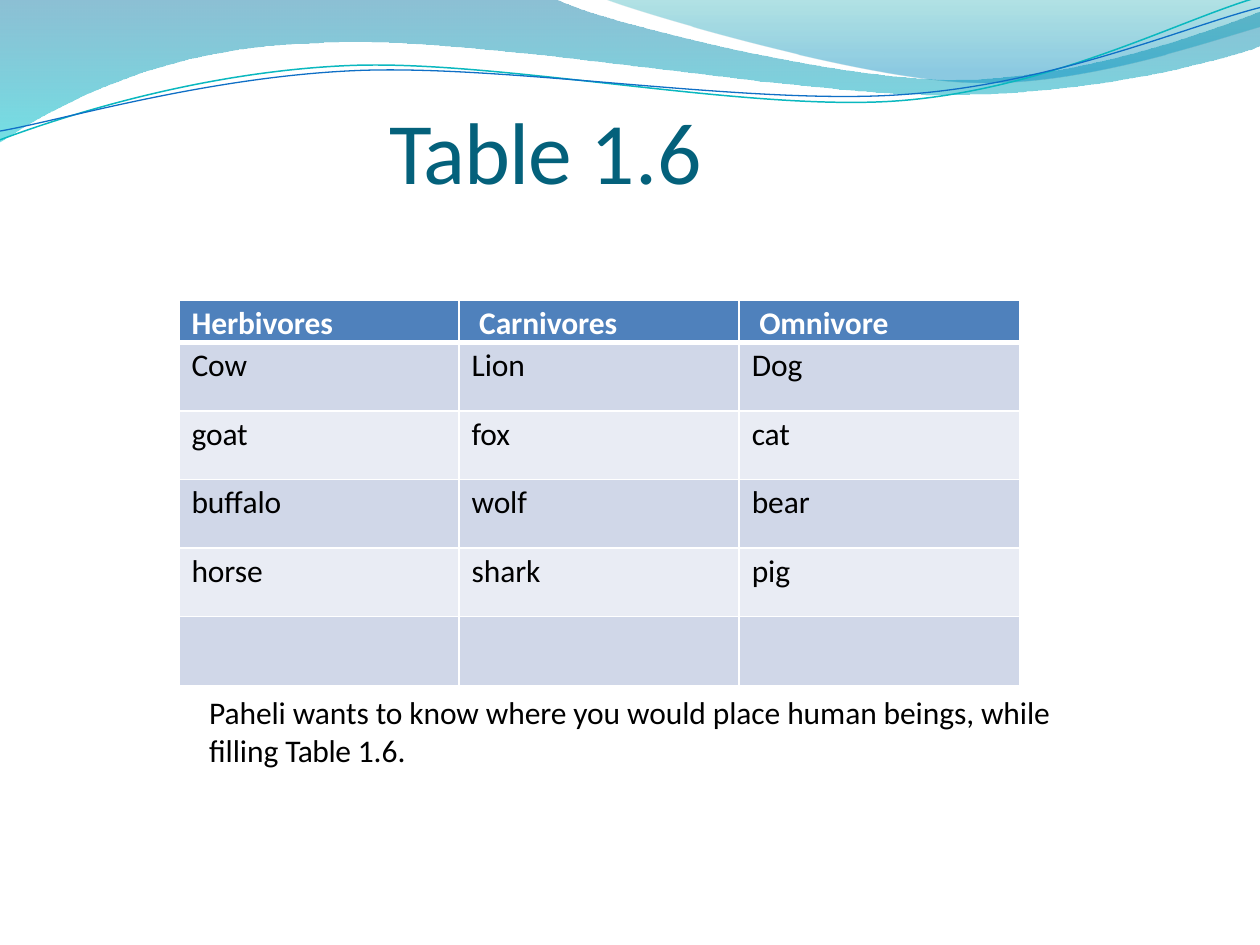
"""Build a slide with a table of animals grouped by diet under a wave banner."""
from dataclasses import dataclass
from math import cos, radians, sin

from pptx import Presentation
from pptx.dml.color import RGBColor as Color
from pptx.enum.text import MSO_ANCHOR as Anchor
from pptx.oxml.ns import qn
from pptx.oxml.xmlchemy import OxmlElement as Element
from pptx.util import Inches, Pt


@dataclass(frozen=True)
class Theme:
    font: str = "Calibri"
    title_size: float = 50
    body_size: float = 18
    title: str = "04617B"
    body: str = "000000"
    white: str = "FFFFFF"
    header: str = "4F81BC"
    bands: tuple = ("D0D7E8", "E9ECF4")
    wide_wave: tuple = ((0, "0074A1", 45), (1, "00C6CF", 55))
    corner_wave: tuple = ((0, "00A1A9", 30), (0.8, "008BBF", 45))
    teal_line: str = "0AB8BF"
    blue_line: str = "0F6FC6"


THEME = Theme()
LINE_TILT = 357.3
LINE_CENTER = (4.99, 0.58)
WIDE_WAVE = [
    [(0, 0)], [(4.4, -0.01)],
    [(4.76, 0.17), (6.64, 0.63), (7.58, 0.63)], [(8.53, 0.63), (9.58, 0.26), (10, 0.09)],
    [(10.01, 0.36)],
    [(9.83, 0.44), (8.7, 0.76), (7.46, 0.75)], [(6.22, 0.75), (3.82, 0.28), (2.57, 0.34)],
    [(1.29, 0.36), (0.46, 0.83), (-0.01, 1.13)],
]
CORNER_WAVE = [
    [(4.79, -0.01)], [(5.09, 0.11), (6.82, 0.62), (7.69, 0.65)],
    [(8.56, 0.69), (9.61, 0.32), (10, 0.21)], [(10, 0)],
]
TEAL_LINE = [
    [(0, 1.11)], [(0.48, 0.93), (1.58, 0.57), (2.77, 0.52)],
    [(3.95, 0.47), (5.93, 0.89), (7.13, 0.8)], [(8.33, 0.71), (9.38, 0.15), (9.98, -0.02)],
]
BLUE_LINE = [
    [(0, 1.04)], [(0.47, 0.96), (1.64, 0.61), (2.83, 0.56)],
    [(4.03, 0.51), (5.97, 0.84), (7.17, 0.75)], [(8.36, 0.67), (9.41, 0.21), (10, 0.06)],
]
ANIMALS = [
    ("Herbivores", "Carnivores", "Omnivore"),
    ("Cow", "Lion", "Dog"),
    ("goat", "fox", "cat"),
    ("buffalo", "wolf", "bear"),
    ("horse", "shark", "pig"),
    ("", "", ""),
]
ROW_HEIGHTS = [0.3] + [2.72 / 5] * 5
RULE_WIDTHS = [1, 3, 1, 1, 1.5, 1, 1]


def level(point):
    """Turn a point back around the line center by the tilt of the lines."""
    angle = radians(-LINE_TILT)
    x, y = point[0] - LINE_CENTER[0], point[1] - LINE_CENTER[1]
    return (LINE_CENTER[0] + x * cos(angle) - y * sin(angle),
            LINE_CENTER[1] + x * sin(angle) + y * cos(angle))


def add_outline(slide, segments, close):
    """Add a freeform of straight (one point) and cubic (three point) segments."""
    start, *others = [(Inches(x), Inches(y)) for segment in segments for x, y in segment]
    builder = slide.shapes.build_freeform(*start)
    builder.add_line_segments(others, close=close)
    shape = builder.convert_to_shape()
    shape.shadow.inherit = False
    steps = iter(list(shape._element.spPr.iter(qn("a:lnTo"))))
    for segment in segments[1:]:
        first, *rest = [next(steps) for _ in segment]
        if rest:
            curve = Element("a:cubicBezTo")
            first.addprevious(curve)
            for step in (first, *rest):
                curve.append(step[0])
                step.getparent().remove(step)
    return shape


def add_wave(slide, segments, stops):
    """Add a closed wave with a translucent vertical gradient."""
    shape = add_outline(slide, segments, True)
    shape.line.fill.background()
    shape.fill.gradient()
    shape.fill.gradient_angle = 270
    for stop, (position, color, _) in zip(shape.fill.gradient_stops, stops):
        stop.position = position
        stop.color.rgb = Color.from_string(color)
    for node, (_, _, opacity) in zip(shape._element.spPr.iter(qn("a:srgbClr")), stops):
        alpha = Element("a:alpha")
        alpha.set("val", str(opacity * 1000))
        node.append(alpha)


def add_wave_line(slide, segments, color, width):
    """Add an open tilted wave line."""
    leveled = [[level(point) for point in segment] for segment in segments]
    shape = add_outline(slide, leveled, False)
    shape.rotation = LINE_TILT
    shape.fill.background()
    shape.line.color.rgb = Color.from_string(color)
    shape.line.width = Pt(width)


def add_run(paragraph, text, size, color, spacing=-0.05, bold=False):
    """Add a run with its type and letter spacing in points."""
    run = paragraph.add_run()
    run.text = text
    run.font.name, run.font.size, run.font.bold = THEME.font, Pt(size), bold
    run.font.color.rgb = Color.from_string(color)
    run._r.get_or_add_rPr().set("spc", str(round(spacing * 100)))


def set_offset(paragraph, indent, before):
    """Set the left indent in inches and the space before in points."""
    paragraph.space_before = Pt(before)
    paragraph._p.get_or_add_pPr().set("marL", str(Inches(indent)))


def set_margins(holder, top):
    """Keep only a margin above the text."""
    holder.margin_left = holder.margin_right = holder.margin_bottom = 0
    holder.margin_top = Inches(top)


def add_text(slide, box, runs, size, color, anchor=Anchor.TOP):
    """Add a one-paragraph text box from (text, spacing) runs."""
    frame = slide.shapes.add_textbox(*(Inches(value) for value in box)).text_frame
    frame.word_wrap = True
    frame.vertical_anchor = anchor
    set_margins(frame, 0.01)
    paragraph = frame.paragraphs[0]
    set_offset(paragraph, 0.01, 1)
    for text, spacing in runs:
        add_run(paragraph, text, size, color, spacing)


def add_border(cell, side, width):
    """Rule one side of a cell in white."""
    line, fill, color = (Element(name) for name in (f"a:ln{side}", "a:solidFill", "a:srgbClr"))
    line.set("w", str(Pt(width)))
    color.set("val", THEME.white)
    fill.append(color)
    line.append(fill)
    cell._tc.get_or_add_tcPr().append(line)


def fill_cell(cell, text, row, column):
    """Rule, colour and fill one cell of the table."""
    header = row == 0
    for side, width in zip("LRTB", (1, 1, RULE_WIDTHS[row], RULE_WIDTHS[row + 1])):
        add_border(cell, side, width)
    cell.fill.solid()
    color = THEME.header if header else THEME.bands[(row - 1) % 2]
    cell.fill.fore_color.rgb = Color.from_string(color)
    set_margins(cell, 0.04 if header else 0.03)
    if text:
        paragraph = cell.text_frame.paragraphs[0]
        set_offset(paragraph, 0.16 if header and column else 0.1, 2.4)
        add_run(paragraph, text, THEME.body_size,
                THEME.white if header else THEME.body, bold=header)


def add_animal_table(slide):
    """Add the table of animals by diet."""
    box = (Inches(value) for value in (1.42, 2.38, 6.67, sum(ROW_HEIGHTS)))
    table = slide.shapes.add_table(len(ANIMALS), len(ANIMALS[0]), *box).table
    for row, animals in enumerate(ANIMALS):
        table.rows[row].height = Inches(ROW_HEIGHTS[row])
        for column, animal in enumerate(animals):
            fill_cell(table.cell(row, column), animal, row, column)


def main():
    """Build and save the slide."""
    presentation = Presentation()
    presentation.slide_width, presentation.slide_height = Inches(10), Inches(7.5)
    slide = presentation.slides.add_slide(presentation.slide_layouts[6])
    add_wave(slide, WIDE_WAVE, THEME.wide_wave)
    add_wave(slide, CORNER_WAVE, THEME.corner_wave)
    add_wave_line(slide, TEAL_LINE, THEME.teal_line, 0.85)
    add_wave_line(slide, BLUE_LINE, THEME.blue_line, 0.75)
    add_text(slide, (3.08, 0.75, 3.23, 0.85), [("Table ", -0.65), ("1.6", -0.05)],
             THEME.title_size, THEME.title, Anchor.BOTTOM)
    add_animal_table(slide)
    question = "Paheli wants to know where you would place human beings, while filling "
    add_text(slide, (1.65, 5.49, 6.76, 0.63), [(question, -0.05), ("Table ", -0.25), ("1.6.", 0)],
             THEME.body_size, THEME.body)
    presentation.save("out.pptx")


if __name__ == "__main__":
    main()
